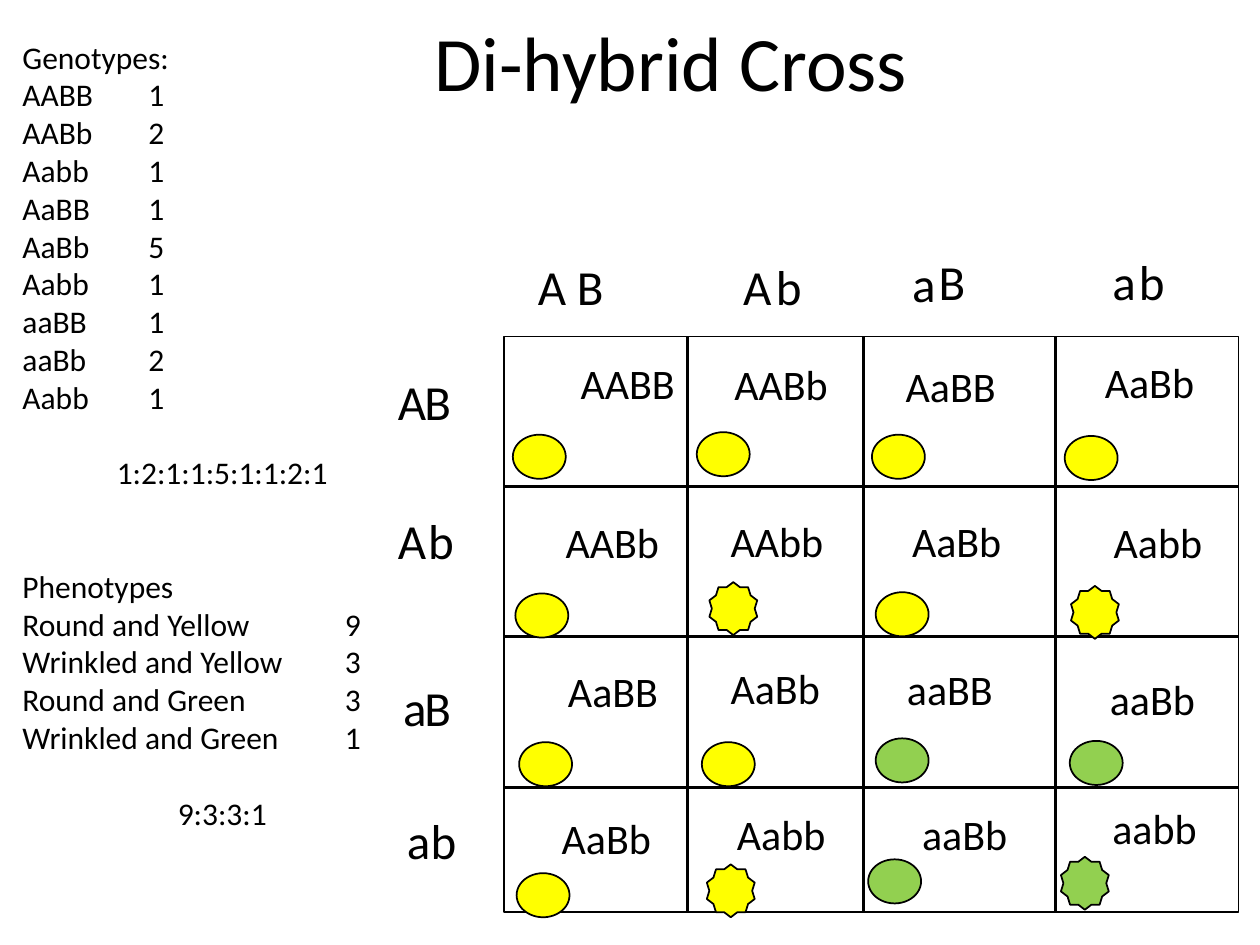
from lxml.etree import SubElement
from pptx import Presentation
from pptx.dml.color import RGBColor
from pptx.enum.shapes import MSO_CONNECTOR, MSO_SHAPE
from pptx.enum.text import MSO_ANCHOR, PP_ALIGN
from pptx.oxml.ns import qn
from pptx.util import Inches, Pt

BLACK = RGBColor(0x00, 0x00, 0x00)
WHITE = RGBColor(0xFF, 0xFF, 0xFF)
YELLOW = RGBColor(0xFF, 0xFF, 0x00)
GREEN = RGBColor(0x92, 0xD0, 0x50)

# Punnett square: outer edges and inner dividers
COLUMN_EDGES = [4, 5.46, 6.85, 8.38, 9.83]
ROW_EDGES = [2.67, 3.86, 5.05, 6.25, 7.24]

# Gamete letters: letter, left, top
GAMETES = [
    ("A", 4.17, 1.99), ("B", 4.48, 1.99), ("A", 5.8, 1.99), ("b", 6.06, 1.99),
    ("a", 7.14, 1.96), ("B", 7.35, 1.95), ("a", 8.73, 1.95), ("b", 8.94, 1.95),
    ("A", 3.06, 2.9), ("B", 3.27, 2.9), ("A", 3.06, 4), ("b", 3.3, 4),
    ("a", 3.1, 5.33), ("B", 3.27, 5.33), ("a", 3.13, 6.38), ("b", 3.32, 6.38),
]

# Offspring: genotype, label left and top, seed left and top
OFFSPRING = [
    ("AABB", 4.51, 2.79, 4.07, 3.45), ("AABb", 5.73, 2.8, 5.53, 3.43),
    ("AaBB", 7.09, 2.81, 6.92, 3.45), ("AaBb", 8.67, 2.78, 8.45, 3.46),
    ("AABb", 4.39, 4.05, 4.09, 4.71), ("AAbb", 5.7, 4.04, 5.63, 4.62),
    ("AaBb", 7.14, 4.04, 6.95, 4.7), ("Aabb", 8.74, 4.05, 8.5, 4.65),
    ("AaBB", 4.41, 5.23, 4.12, 5.89), ("AaBb", 5.7, 5.21, 5.57, 5.89),
    ("aaBB", 7.1, 5.22, 6.95, 5.86), ("aaBb", 8.71, 5.3, 8.49, 5.88),
    ("AaBb", 4.36, 6.4, 4.1, 6.93), ("Aabb", 5.75, 6.37, 5.61, 6.86),
    ("aaBb", 7.22, 6.37, 6.89, 6.82), ("aabb", 8.73, 6.32, 8.42, 6.8),
]

GENOTYPE_COUNTS = [
    ("AABB", 1), ("AABb", 2), ("Aabb", 1), ("AaBB", 1), ("AaBb", 5),
    ("Aabb", 1), ("aaBB", 1), ("aaBb", 2), ("Aabb", 1),
]
PHENOTYPE_COUNTS = [
    ("Round and Yellow", 9), ("Wrinkled and Yellow", 3),
    ("Round and Green", 3), ("Wrinkled and Green", 1),
]


class CrossPage:
    font = "Calibri"
    blank_line = 21.6

    def __init__(self, page):
        self.page = page

    def span(self, para, text, size):
        span = para.add_run()
        span.text = text
        span.font.name = self.font
        span.font.size = Pt(size)
        span.font.color.rgb = BLACK

    def box(self, left, top, width, height):
        box = self.page.shapes.add_textbox(
            Inches(left), Inches(top), Inches(width), Inches(height))
        box.text_frame.word_wrap = True
        return box.text_frame

    def label(self, text, left, top, width, height, size):
        frame = self.box(left, top, width, height)
        self.span(frame.paragraphs[0], text, size)
        return frame

    def shape(self, kind, left, top, width, height, fill, parent=None):
        shape = (parent or self.page).shapes.add_shape(
            kind, Inches(left), Inches(top), Inches(width), Inches(height))
        shape.shadow.inherit = False
        shape.fill.solid()
        shape.fill.fore_color.rgb = fill
        shape.line.color.rgb = BLACK
        shape.line.width = Pt(1)

    def line(self, x1, y1, x2, y2, parent):
        line = parent.shapes.add_connector(
            MSO_CONNECTOR.STRAIGHT, Inches(x1), Inches(y1), Inches(x2), Inches(y2))
        line.line.color.rgb = BLACK
        line.line.width = Pt(1.75)
        SubElement(line._element.spPr, qn("a:effectLst"))

    def grid(self, columns, rows):
        group = self.page.shapes.add_group_shape()
        left, right, top, bottom = columns[0], columns[-1], rows[0], rows[-1]
        self.shape(MSO_SHAPE.RECTANGLE, left, top, right - left, bottom - top,
                   WHITE, group)
        for x in columns[1:-1]:
            self.line(x, top, x, bottom, group)
        for y in rows[1:-1]:
            self.line(left, y, right, y, group)

    def seed(self, genotype, left, top):
        color = YELLOW if "A" in genotype else GREEN
        if "B" in genotype:
            self.shape(MSO_SHAPE.OVAL, left, top, 0.42, 0.35, color)
        else:
            self.shape(MSO_SHAPE.STAR_10_POINT, left, top, 0.38, 0.42, color)

    def tally(self, frame, heading, counts, ratio, tab, blanks_before=0):
        first = frame.paragraphs[0]
        para = frame.add_paragraph() if first.runs else first
        para.space_before = Pt(blanks_before * self.blank_line)
        self.span(para, heading, 18)
        for name, count in counts:
            para = frame.add_paragraph()
            stops = SubElement(para._p.get_or_add_pPr(), qn("a:tabLst"))
            SubElement(stops, qn("a:tab"), pos=str(Inches(tab)), algn="l")
            self.span(para, f"{name}\t{count}", 18)
        para = frame.add_paragraph()
        para.alignment = PP_ALIGN.CENTER
        para.space_before = Pt(self.blank_line)
        self.span(para, ratio, 18)


def main():
    deck = Presentation()
    deck.slide_width, deck.slide_height = Inches(10), Inches(7.5)
    cross = CrossPage(deck.slides.add_slide(deck.slide_layouts[6]))

    # Title
    title = cross.label("Di-hybrid Cross", 3.35, -0.1, 9, 1.25, 44)
    title.vertical_anchor = MSO_ANCHOR.MIDDLE
    title.paragraphs[0].line_spacing = 0.9

    # Punnett square with its gametes
    cross.grid(COLUMN_EDGES, ROW_EDGES)
    for letter, left, top in GAMETES:
        cross.label(letter, left, top, 0.42, 0.57, 28)

    # Offspring genotypes and seeds
    for genotype, left, top, seed_left, seed_top in OFFSPRING:
        cross.seed(genotype, seed_left, seed_top)
        cross.label(genotype, left, top, 1, 0.5, 24)

    # Tallies on the left
    tallies = cross.box(0.08, 0.25, 3.37, 6.77)
    cross.tally(tallies, "Genotypes:", GENOTYPE_COUNTS, "1:2:1:1:5:1:1:2:1", 1)
    cross.tally(tallies, "Phenotypes", PHENOTYPE_COUNTS, "9:3:3:1", 2.56,
                blanks_before=2)

    deck.save("out.pptx")


if __name__ == "__main__":
    main()
